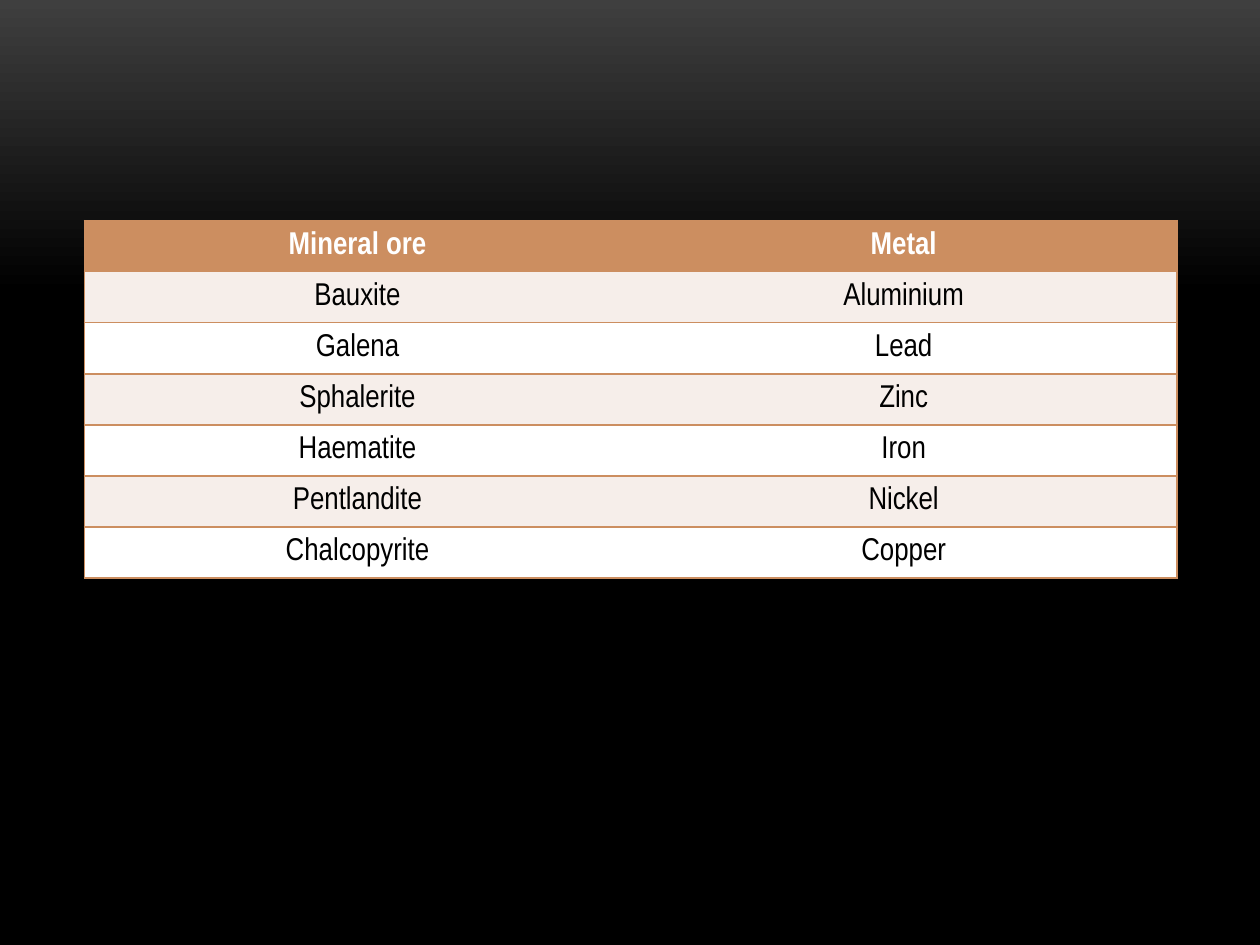
from lxml.etree import SubElement
from pptx import Presentation
from pptx.dml.color import RGBColor
from pptx.enum.text import MSO_ANCHOR, PP_ALIGN
from pptx.oxml.ns import qn
from pptx.util import Inches, Pt

WHITE = RGBColor(0xFF, 0xFF, 0xFF)
BLACK = RGBColor(0x00, 0x00, 0x00)
CHARCOAL = RGBColor(0x3F, 0x3F, 0x3F)
COPPER = RGBColor(0xCC, 0x8E, 0x60)
BLUSH = RGBColor(0xF6, 0xEE, 0xEA)

ORES = [
    ("Mineral ore", "Metal"),
    ("Bauxite", "Aluminium"),
    ("Galena", "Lead"),
    ("Sphalerite", "Zinc"),
    ("Haematite", "Iron"),
    ("Pentlandite", "Nickel"),
    ("Chalcopyrite", "Copper"),
]


class SlideBuilder:
    font_name = "Arial Narrow"
    font_size = Pt(18)
    border_width = Pt(1)

    def __init__(self, slide):
        self.slide = slide

    def background(self, top, bottom, fade_end):
        """Fade from the top colour to the bottom one, reached at fade_end."""
        fill = self.slide.background.fill
        fill.gradient()
        fill.gradient_angle = 270
        for stop, color, position in zip(fill.gradient_stops, (top, bottom), (0, fade_end)):
            stop.color.rgb = color
            stop.position = position

    def borders(self, cell, visible_sides):
        """Draw the named sides (L, R, T, B) and clear the others."""
        properties = cell._tc.get_or_add_tcPr()
        for side in "LRTB":
            line = SubElement(properties, qn(f"a:ln{side}"), w=str(self.border_width))
            if side in visible_sides:
                solid = SubElement(line, qn("a:solidFill"))
                SubElement(solid, qn("a:srgbClr"), val=str(COPPER))
            else:
                SubElement(line, qn("a:noFill"))

    def cell(self, cell, text, fill, color, bold, visible_sides):
        self.borders(cell, visible_sides)
        cell.fill.solid()
        cell.fill.fore_color.rgb = fill
        cell.vertical_anchor = MSO_ANCHOR.MIDDLE
        cell.text = text
        paragraph = cell.text_frame.paragraphs[0]
        paragraph.alignment = PP_ALIGN.CENTER
        font = paragraph.font
        font.name, font.size, font.bold = self.font_name, self.font_size, bold
        font.color.rgb = color

    def table(self, rows, left, top, width, height):
        """Add a table with a header row, banded body and no inner vertical lines."""
        last_column = len(rows[0]) - 1
        table = self.slide.shapes.add_table(
            len(rows), last_column + 1, left, top, width, height).table
        table.horz_banding = False
        for r, row in enumerate(rows):
            header = r == 0
            fill = COPPER if header else BLUSH if r % 2 else WHITE
            for c, text in enumerate(row):
                sides = "TB" + "L" * (c == 0) + "R" * (c == last_column)
                self.cell(table.cell(r, c), text, fill,
                          WHITE if header else BLACK, header, sides)


def main():
    presentation = Presentation()
    presentation.slide_width = Inches(10)
    presentation.slide_height = Inches(7.5)
    builder = SlideBuilder(presentation.slides.add_slide(presentation.slide_layouts[6]))
    builder.background(CHARCOAL, BLACK, 0.31)
    builder.table(ORES, Inches(0.67), Inches(1.75), Inches(8.67), Inches(2.84))
    presentation.save("out.pptx")


if __name__ == "__main__":
    main()
